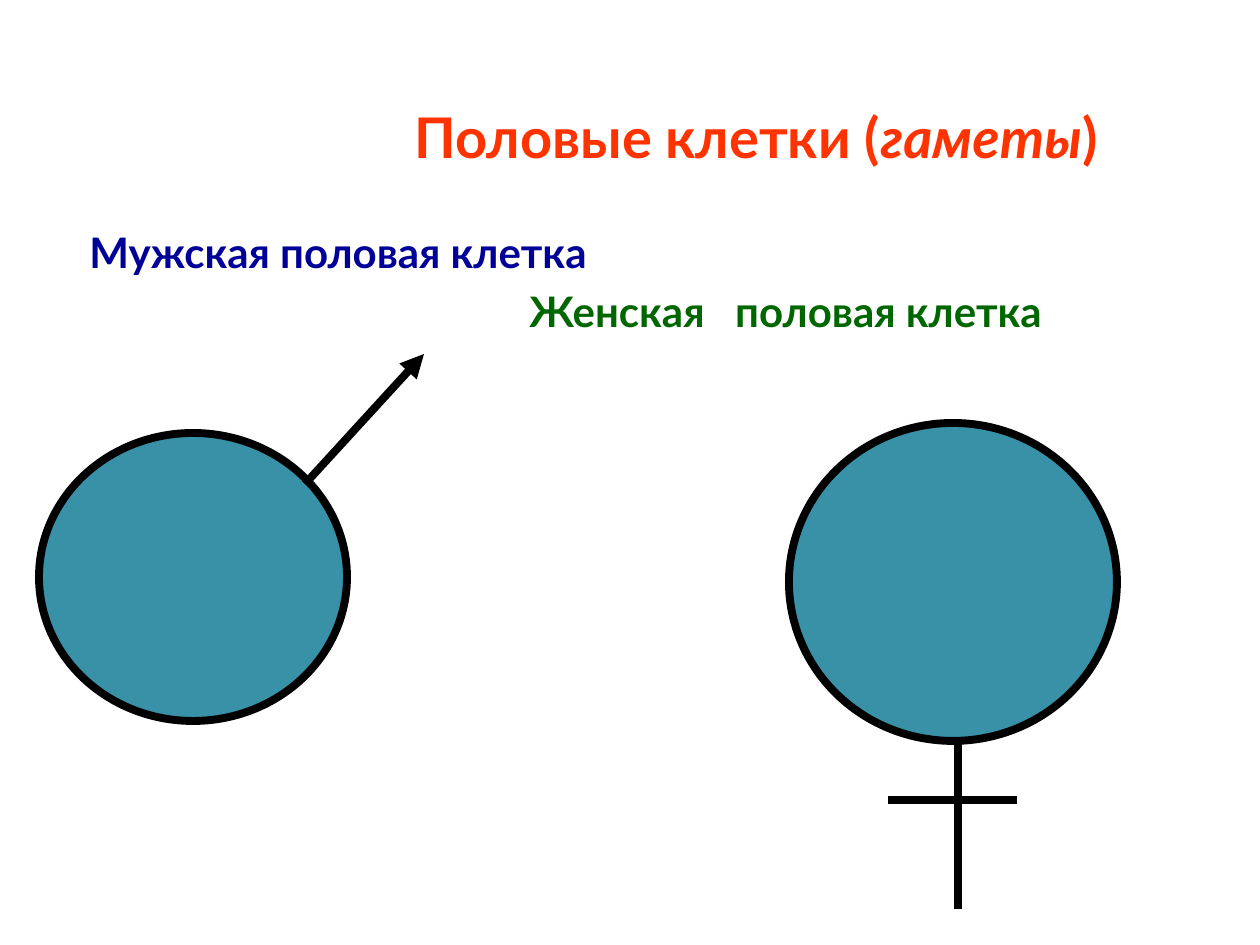
import lxml.etree
import pptx
import pptx.dml.color
import pptx.enum.shapes
import pptx.enum.text
import pptx.oxml.ns
import pptx.util

PX_PER_INCH = 126
FONT = "Lato"
RED = pptx.dml.color.RGBColor(0xFF, 0x33, 0x00)
BLUE = pptx.dml.color.RGBColor(0x00, 0x00, 0x99)
GREEN = pptx.dml.color.RGBColor(0x00, 0x66, 0x00)
TEAL = pptx.dml.color.RGBColor(0x38, 0x91, 0xA7)
BLACK = pptx.dml.color.RGBColor(0x00, 0x00, 0x00)


def px(length):
    return pptx.util.Emu(round(length * pptx.util.Inches(1) / PX_PER_INCH))


def add_span(para, text, *, size, color, italic=False):
    span = para.add_run()
    span.text = text
    font = span.font
    font.name, font.size, font.bold, font.italic = FONT, pptx.util.Pt(size), True, italic
    font.color.rgb = color


class GametePage:
    line_width = pptx.util.Pt(4.5)

    def __init__(self, deck):
        self.page = deck.slides.add_slide(deck.slide_layouts[6])

    def text_frame(self, left, top, width, height, anchor):
        box = self.page.shapes.add_textbox(px(left), px(top), px(width), px(height))
        frame = box.text_frame
        frame.word_wrap = True
        frame.vertical_anchor = anchor
        return frame

    def cell(self, left, top, width, height):
        oval = self.page.shapes.add_shape(
            pptx.enum.shapes.MSO_SHAPE.OVAL, px(left), px(top), px(width), px(height))
        oval.shadow.inherit = False
        oval.fill.solid()
        oval.fill.fore_color.rgb = TEAL
        self.style_line(oval.line)

    def stroke(self, start_x, start_y, end_x, end_y, arrow=False):
        connector = self.page.shapes.add_connector(
            pptx.enum.shapes.MSO_CONNECTOR.STRAIGHT,
            px(start_x), px(start_y), px(end_x), px(end_y))
        self.style_line(connector.line)
        properties = connector._element.spPr
        if arrow:
            outline = properties.find(pptx.oxml.ns.qn("a:ln"))
            lxml.etree.SubElement(outline, pptx.oxml.ns.qn("a:tailEnd"), type="triangle")
        lxml.etree.SubElement(properties, pptx.oxml.ns.qn("a:effectLst"))

    def style_line(self, line):
        line.color.rgb = BLACK
        line.width = self.line_width


def main():
    deck = pptx.Presentation()
    deck.slide_width, deck.slide_height = px(1260), px(945)
    page = GametePage(deck)
    anchors = pptx.enum.text.MSO_ANCHOR

    title = page.text_frame(315, 78, 882, 117, anchors.MIDDLE).paragraphs[0]
    title.alignment = pptx.enum.text.PP_ALIGN.CENTER
    for text, italic in (("Половые клетки (", False), ("гаметы", True), (")", False)):
        add_span(title, text, size=32, color=RED, italic=italic)

    labels = page.text_frame(69, 220, 1128, 624, anchors.TOP)
    male = labels.paragraphs[0]
    male_indent, female_indent = 8, 448
    male._p.get_or_add_pPr().set("marL", str(px(male_indent)))
    add_span(male, "Мужская половая клетка", size=24, color=BLUE)
    female = labels.add_paragraph()
    female._p.get_or_add_pPr().set("marL", str(px(female_indent)))
    female.space_before = pptx.util.Pt(4.8)
    add_span(female, "Женская   половая клетка", size=24, color=GREEN)

    page.cell(39, 433, 308, 288)
    page.stroke(305, 484, 424, 354, arrow=True)
    page.cell(789, 423, 328, 318)
    page.stroke(958, 741, 958, 909)
    page.stroke(888, 800, 1017, 800)

    deck.save("out.pptx")


if __name__ == "__main__":
    main()
